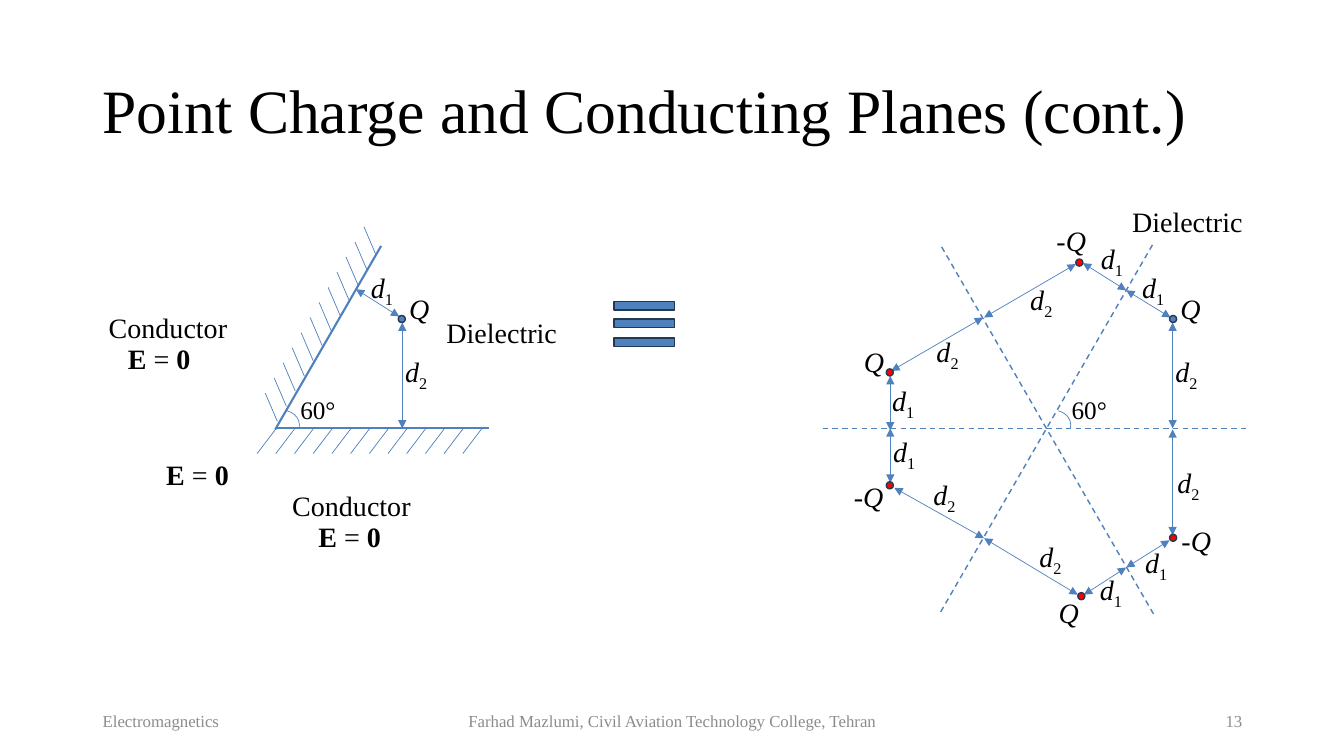
import pptx
import pptx.util
import pptx.dml.color
import pptx.enum.dml
import pptx.enum.shapes
import pptx.enum.text
import pptx.oxml.ns
import lxml.etree

SCALE = 9144  # EMU in one px; 100 px to the inch
FONT = "Times New Roman"
BLUE, NAVY, RED, BLACK, GREY = "4F81BD", "233953", "FF0000", "000000", "8C8C8C"
SHAPES = pptx.enum.shapes.MSO_SHAPE
ALIGN = pptx.enum.text.PP_ALIGN

# Content: text runs are (text, style), styles are b, i, sub or plain
TITLE = "Point Charge and Conducting Planes (cont.)"
FOOTERS = [
    ("Electromagnetics", 92, 300, ALIGN.LEFT),
    ("Farhad Mazlumi, Civil Aviation Technology College, Tehran", 442, 450, ALIGN.CENTER),
    ("13", 942, 300, ALIGN.RIGHT),
]
D1 = [("d", "i"), ("1", "sub")]
D2 = [("d", "i"), ("2", "sub")]
PLUS, MINUS = [("Q", "i")], [("-Q", "i")]
FIELD = [("E", "b"), (" = ", ""), ("0", "b")]
CONDUCTOR, DIELECTRIC = [("Conductor", "")], [("Dielectric", "")]

# Labels: runs, width, left-top corners
LABELS = [
    (CONDUCTOR, 139, [(98, 303), (280, 480)]),
    (DIELECTRIC, 130, [(433, 308), (1113, 198)]),
    (FIELD, 83, [(155, 449), (306, 510), (117, 334)]),
    (PLUS, 41, [(396, 284), (1161, 284), (847, 337), (1040, 586)]),
    (MINUS, 50, [(1038, 217), (837, 471), (1162, 514)]),
    (D1, 44, [(358, 263), (1123, 263), (1082, 235), (876, 426), (875, 376),
              (1081, 563), (1126, 536)]),
    (D2, 44, [(392, 347), (1156, 347), (1158, 457), (1021, 530), (916, 469),
              (919, 327), (1012, 275)]),
]

# Lines: from x, y to x, y
PLANES = [(275, 425, 485, 425), (273, 426, 378, 244)]
IMAGE_PLANES = [(816, 425, 1236, 425), (933, 607, 1143, 243), (934, 245, 1144, 609)]
DISTANCES = [
    (396, 314, 353, 287), (399, 425, 399, 320),
    (1163, 425, 1163, 320), (1163, 531, 1163, 426),
    (976, 315, 1067, 262), (884, 368, 975, 315),
    (1161, 315, 1117, 288), (1117, 288, 1074, 261),
    (883, 427, 883, 373), (883, 479, 883, 425),
    (1117, 563, 1160, 536), (1075, 590, 1117, 563),
    (976, 534, 1069, 590), (887, 484, 976, 534),
]
CHARGES = [  # left, top, fill
    (395, 313, BLUE), (1160, 313, BLUE), (1067, 257, RED), (879, 366, RED),
    (1160, 530, RED), (879, 478, RED), (1069, 588, RED),
]
HATCHES = 12
ANGLES = [263, 1028]  # left edge of each 60° arc
BAR_TOPS = [286, 303, 322]


def px(length):
    return pptx.util.Emu(round(length * SCALE))


def color(hex_string):
    return pptx.dml.color.RGBColor.from_string(hex_string)


def add_text(page, runs, left, top, width, height, *, size=20, fill=BLACK,
             align=ALIGN.LEFT, wrap=False, middle=False, spacing=None):
    box = page.shapes.add_textbox(px(left), px(top), px(width), px(height))
    frame = box.text_frame
    frame.word_wrap = wrap
    if not wrap:
        frame.auto_size = pptx.enum.text.MSO_AUTO_SIZE.SHAPE_TO_FIT_TEXT
    if middle:
        frame.vertical_anchor = pptx.enum.text.MSO_ANCHOR.MIDDLE
    para = frame.paragraphs[0]
    para.alignment = align
    para.line_spacing = spacing
    for text, style in runs:
        span = para.add_run()
        span.text = text
        span.font.name = FONT
        span.font.size = pptx.util.Pt(size)
        span.font.color.rgb = color(fill)
        span.font.bold = style == "b"
        span.font.italic = style == "i"
        if style == "sub":
            span._r.get_or_add_rPr().set("baseline", "-25000")


def add_line(page, ends, weight=0.5, dashed=False, arrows=False):
    line = page.shapes.add_connector(
        pptx.enum.shapes.MSO_CONNECTOR.STRAIGHT, *[px(value) for value in ends])
    line.line.color.rgb = color(BLUE)
    line.line.width = pptx.util.Pt(weight)
    if dashed:
        line.line.dash_style = pptx.enum.dml.MSO_LINE.DASH
    if arrows:
        outline = line.line._get_or_add_ln()
        for end in ("a:headEnd", "a:tailEnd"):
            lxml.etree.SubElement(outline, pptx.oxml.ns.qn(end), type="triangle")
    lxml.etree.SubElement(line._element.spPr, pptx.oxml.ns.qn("a:effectLst"))


def add_shape(page, kind, left, top, width, height, fill=None, edge=NAVY, weight=1):
    shape = page.shapes.add_shape(kind, px(left), px(top), px(width), px(height))
    shape.shadow.inherit = False
    if fill:
        shape.fill.solid()
        shape.fill.fore_color.rgb = color(fill)
    else:
        shape.fill.background()
    shape.line.color.rgb = color(edge)
    shape.line.width = pptx.util.Pt(weight)
    return shape


def main():
    deck = pptx.Presentation()
    deck.slide_width, deck.slide_height = px(1333), px(750)
    page = deck.slides.add_slide(deck.slide_layouts[6])

    # Title and footer
    add_text(page, [(TITLE, "")], 92, 40, 1150, 145, size=44, wrap=True,
             middle=True, spacing=0.9)
    for text, left, width, align in FOOTERS:
        add_text(page, [(text, "")], left, 695, width, 40, size=12, fill=GREY,
                 align=align, wrap=True, middle=True)

    # Conducting planes with hatching
    for ends in PLANES:
        add_line(page, ends, weight=1.5)
    for step in range(HATCHES):
        x, y = 373 - 8.9 * step, 253 + 15 * step
        add_line(page, (x, y, x - 12, y - 28))
        x = 274 + 18.55 * step
        add_line(page, (x, 425, x - 19, 450))

    # Equivalence sign
    for top in BAR_TOPS:
        add_shape(page, SHAPES.MATH_MINUS, 598, top, 82, 35, fill=BLUE)

    # Image planes, distances and charges
    for ends in IMAGE_PLANES:
        add_line(page, ends, weight=1, dashed=True)
    for ends in DISTANCES:
        add_line(page, ends, arrows=True)
    for left, top, fill in CHARGES:
        add_shape(page, SHAPES.OVAL, left, top, 7, 7, fill=fill)

    # Angles
    for left in ANGLES:
        arc = add_shape(page, SHAPES.ARC, left, 407, 34, 29, edge=BLUE, weight=0.5)
        arc.adjustments[0], arc.adjustments[1] = 173.16, 6.59
        add_text(page, [("60°", "")], left + 25, 386, 56, 40, size=18)

    # Labels
    for runs, width, corners in LABELS:
        for left, top in corners:
            add_text(page, runs, left, top, width, 44)

    deck.save("out.pptx")


if __name__ == "__main__":
    main()
